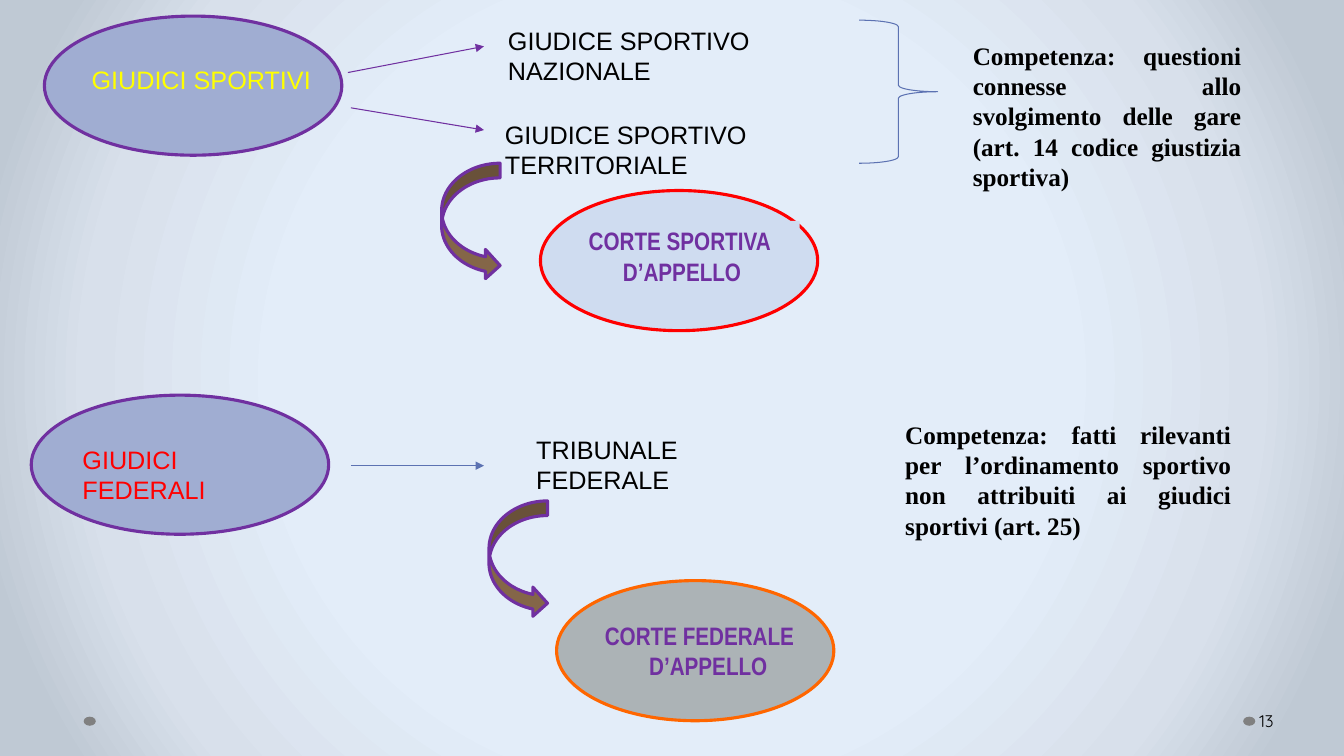
"""Build the slide on sports judges, federal judges and their courts of appeal."""
from pptx import Presentation
from pptx.dml.color import RGBColor
from pptx.enum import shapes, text
from pptx.oxml import parse_xml
from pptx.oxml.ns import nsdecls, qn
from pptx.util import Inches, Pt

BLACK = RGBColor(0x00, 0x00, 0x00)
GREY = RGBColor(0x80, 0x80, 0x80)
PURPLE = RGBColor(0x70, 0x30, 0xA0)
BLUE = RGBColor(0x5C, 0x72, 0xB2)
LAVENDER = RGBColor(0xA0, 0xAD, 0xD2)
PALE_BLUE = RGBColor(0xCF, 0xDC, 0xF0)
SILVER = RGBColor(0xAC, 0xB3, 0xB6)
BROWN = RGBColor(0x84, 0x66, 0x48)
RED = RGBColor(0xFF, 0x00, 0x00)
ORANGE = RGBColor(0xFF, 0x66, 0x00)
YELLOW = RGBColor(0xFF, 0xFF, 0x00)
BACKGROUND = [(50, "E3EDF9"), (76, "D8E0EB"), (92, "BFC9D4")]

SHAPE = shapes.MSO_SHAPE
ALIGN = text.PP_ALIGN

prs = Presentation()
prs.slide_width, prs.slide_height = Inches(13.33), Inches(7.5)
s = prs.slides.add_slide(prs.slide_layouts[6])

s.background.fill.solid()
solid = s._element.find(".//" + qn("a:solidFill"))
stops = "".join(f'<a:gs pos="{pos * 1000}"><a:srgbClr val="{color}"/></a:gs>'
                for pos, color in BACKGROUND)
solid.getparent().replace(solid, parse_xml(
    f'<a:gradFill {nsdecls("a")} rotWithShape="1"><a:gsLst>{stops}</a:gsLst>'
    '<a:path path="circle"><a:fillToRect l="50000" t="50000" r="50000" b="50000"/>'
    '</a:path></a:gradFill>'))


def add_shape(kind, box, fill=None, line=None, width=2.25):
    sp = s.shapes.add_shape(kind, *map(Inches, box))
    sp.shadow.inherit = False
    if fill is None:
        sp.fill.background()
    else:
        sp.fill.solid()
        sp.fill.fore_color.rgb = fill
    if line is None:
        sp.line.fill.background()
    else:
        sp.line.color.rgb = line
        sp.line.width = Pt(width)
    return sp


def add_text(box, lines, font="Arial", color=BLACK, size=18, bold=False, align=ALIGN.LEFT):
    sp = s.shapes.add_textbox(*map(Inches, box))
    tf = sp.text_frame
    tf.word_wrap = True
    for i, line in enumerate(lines):
        p = tf.paragraphs[0] if i == 0 else tf.add_paragraph()
        p.alignment = align
        r = p.add_run()
        r.text = line
        r.font.name, r.font.size, r.font.bold = font, Pt(size), bold
        r.font.color.rgb = color
    return sp


for left in (12.33, 0.83):
    add_shape(SHAPE.OVAL, (left, 7.11, 0.12, 0.09), GREY)
number = add_text((12.46, 6.95, 0.82, 0.4), ["13"], "Quicksand", size=12)
number.text_frame.margin_left = Inches(0.03)
number.text_frame.vertical_anchor = text.MSO_ANCHOR.MIDDLE

for left, top, width, height, fill, line in [
    (0.44, 0.16, 2.95, 1.38, LAVENDER, PURPLE),
    (0.31, 3.92, 2.95, 1.38, LAVENDER, PURPLE),
    (5.36, 1.89, 2.75, 1.39, PALE_BLUE, RED),
    (5.52, 5.76, 2.75, 1.39, SILVER, ORANGE),
]:
    add_shape(SHAPE.OVAL, (left, top, width, height), fill, line)
add_shape(SHAPE.RECTANGLE, (5.69, 2.19, 2.24, 0.71), PALE_BLUE)

for left, top in [(4.38, 1.62), (4.85, 4.97)]:
    add_shape(SHAPE.CURVED_RIGHT_ARROW, (left, top, 0.58, 1.16), BROWN, PURPLE)
add_shape(SHAPE.RIGHT_BRACE, (8.52, 0.2, 0.78, 1.42), line=BLUE, width=0.75)

for x1, y1, x2, y2, color in [
    (3.45, 0.72, 4.8, 0.46, PURPLE),
    (3.48, 1.07, 4.8, 1.29, PURPLE),
    (3.48, 4.62, 4.8, 4.62, BLUE),
]:
    arrow = s.shapes.add_connector(shapes.MSO_CONNECTOR.STRAIGHT,
                                   *map(Inches, (x1, y1, x2, y2)))
    arrow.line.color.rgb = color
    arrow.line.width = Pt(0.75)
    arrow.line._get_or_add_ln().append(
        parse_xml(f'<a:tailEnd {nsdecls("a")} type="triangle"/>'))
    arrow._element.spPr.append(parse_xml(f'<a:effectLst {nsdecls("a")}/>'))

for box, label, color in [
    ((0.81, 0.59, 2.65, 0.4), "GIUDICI SPORTIVI", YELLOW),
    ((4.94, 0.2, 3.9, 0.4), "GIUDICE SPORTIVO NAZIONALE", BLACK),
    ((4.91, 1.13, 3.93, 0.4), "GIUDICE SPORTIVO TERRITORIALE", BLACK),
    ((0.72, 4.36, 2.24, 0.4), "GIUDICI FEDERALI", RED),
    ((5.22, 4.26, 2.79, 0.4), "TRIBUNALE FEDERALE", BLACK),
]:
    add_text(box, [label], color=color)

for box, competence in [
    ((9.55, 0.35, 2.86, 1.62), "Competenza: questioni connesse allo svolgimento delle gare "
                               "(art. 14 codice giustizia sportiva)"),
    ((8.88, 4.11, 3.43, 1.31), "Competenza: fatti rilevanti per l’ordinamento sportivo "
                               "non attribuiti ai giudici sportivi (art. 25)"),
]:
    add_text(box, [competence], "Times New Roman", bold=True, align=ALIGN.JUSTIFY)

for box, court, indent in [
    ((5.69, 2.19, 2.24, 0.71), "CORTE SPORTIVA", 0.05),
    ((5.9, 6.1, 2.25, 0.71), "CORTE FEDERALE", 0),
]:
    sp = add_text(box, [court, "D’APPELLO"], "Arial Narrow", PURPLE, bold=True)
    first, second = sp.text_frame.paragraphs
    first._p.get_or_add_pPr().set("marL", str(Inches(indent)))
    if indent:
        second._p.get_or_add_pPr().set("marL", str(Inches(0.39)))
    else:
        second.alignment = ALIGN.CENTER

prs.save("out.pptx")
